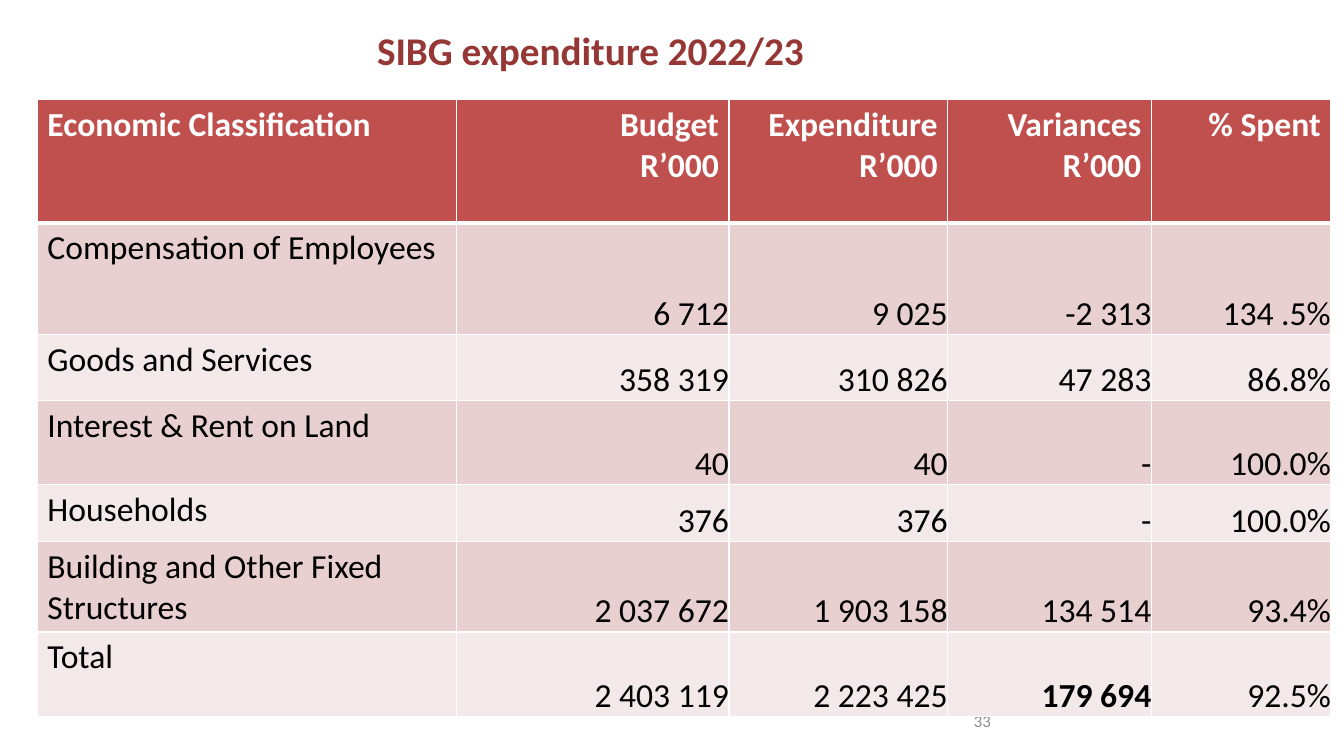
from lxml.etree import SubElement
from pptx import Presentation
from pptx.dml.color import RGBColor
from pptx.enum.text import MSO_ANCHOR, PP_ALIGN
from pptx.oxml.ns import qn
from pptx.util import Inches, Pt

# Content
TITLE = "SIBG expenditure 2022/23"
PAGE_NUMBER = "33"
HEADINGS = ("Economic Classification", "Budget\nR’000", "Expenditure\nR’000",
            "Variances\nR’000", "% Spent")
SPENDING = [
    ("Compensation of Employees", "6 712", "9 025", "-2 313", "134 .5%"),
    ("Goods and Services", "358 319", "310 826", "47 283", "86.8%"),
    ("Interest & Rent on Land", "40", "40", "-", "100.0%"),
    ("Households", "376", "376", "-", "100.0%"),
    ("Building and Other Fixed Structures", "2 037 672", "1 903 158", "134 514", "93.4%"),
    ("Total", "2 403 119", "2 223 425", "179 694", "92.5%"),
]
BOLD_FIGURE = "179 694"

# Layout, in inches
TITLE_BOX = (0, 0, 11.71, 0.99)
PAGE_BOX = (9.56, 6.95, 3.11, 0.4)
TABLE_ORIGIN = (0.37, 0.99)
COLUMN_WIDTHS = (4.16, 2.7, 2.17, 2.02, 1.78)
ROW_HEIGHTS = (1.22, 1.11, 0.65, 0.84, 0.56, 0.84, 0.84)

THEME = {
    "font": "Calibri",
    "title": {"size": Pt(28), "color": "953735", "bold": True},
    "page": {"size": Pt(12), "color": "8C8C8C", "bold": False},
    "heading": {"size": Pt(24), "color": "FFFFFF", "bold": True},
    "body": {"size": Pt(24), "color": "000000", "bold": False},
    "total": {"size": Pt(24), "color": "000000", "bold": True},
    "heading_fill": "C0504D",
    "bands": ("E8D0D0", "F4E9E9"),
    "border": "FFFFFF",
    "thin": Pt(1),
    "thick": Pt(3),
}
FIGURE_FORMAT = {"vertical_anchor": MSO_ANCHOR.BOTTOM, "margin_left": 0,
                 "margin_right": 0, "margin_top": 0, "margin_bottom": 0}


def write(frame, text, style, align):
    frame.text = text
    for paragraph in frame.paragraphs:
        paragraph.alignment = align
        for run in paragraph.runs:
            formats = {"name": THEME["font"], "size": style["size"], "bold": style["bold"]}
            for name, value in formats.items():
                setattr(run.font, name, value)
            run.font.color.rgb = RGBColor.from_string(style["color"])


def add_label(slide, box, text, style, align):
    frame = slide.shapes.add_textbox(*map(Inches, box)).text_frame
    for name, value in {"word_wrap": True, "vertical_anchor": MSO_ANCHOR.MIDDLE}.items():
        setattr(frame, name, value)
    write(frame, text, style, align)


def paint(cell, fill, top, bottom):
    cell.fill.solid()
    cell.fill.fore_color.rgb = RGBColor.from_string(fill)
    properties = cell._tc.get_or_add_tcPr()
    widths = {"L": THEME["thin"], "R": THEME["thin"], "T": top, "B": bottom}
    # Borders come before the fill in the cell properties
    for position, (side, width) in enumerate(widths.items()):
        line = SubElement(properties, qn(f"a:ln{side}"), w=str(width))
        solid = SubElement(line, qn("a:solidFill"))
        SubElement(solid, qn("a:srgbClr"), val=THEME["border"])
        properties.insert(position, line)


def add_spending_table(slide):
    rows = [HEADINGS, *SPENDING]
    size = (sum(COLUMN_WIDTHS), sum(ROW_HEIGHTS))
    table = slide.shapes.add_table(len(rows), len(HEADINGS),
                                   *map(Inches, TABLE_ORIGIN + size)).table
    for column, width in zip(table.columns, COLUMN_WIDTHS):
        column.width = Inches(width)
    for row, height in zip(table.rows, ROW_HEIGHTS):
        row.height = Inches(height)

    for r, texts in enumerate(rows):
        fill = THEME["bands"][(r - 1) % 2] if r else THEME["heading_fill"]
        top = THEME["thick"] if r == 1 else THEME["thin"]
        bottom = THEME["thick"] if r == 0 else THEME["thin"]
        for c, text in enumerate(texts):
            cell = table.cell(r, c)
            role = "heading" if r == 0 else "total" if text == BOLD_FIGURE else "body"
            write(cell.text_frame, text, THEME[role], PP_ALIGN.RIGHT if c else PP_ALIGN.LEFT)
            if r and c:
                for name, value in FIGURE_FORMAT.items():
                    setattr(cell, name, value)
            paint(cell, fill, top, bottom)


def main():
    deck = Presentation()
    deck.slide_width, deck.slide_height = Inches(13.33), Inches(7.5)
    slide = deck.slides.add_slide(deck.slide_layouts[6])
    add_label(slide, TITLE_BOX, TITLE, THEME["title"], PP_ALIGN.CENTER)
    # The page number sits behind the table's lower edge
    add_label(slide, PAGE_BOX, PAGE_NUMBER, THEME["page"], PP_ALIGN.LEFT)
    add_spending_table(slide)
    deck.save("out.pptx")


if __name__ == "__main__":
    main()
